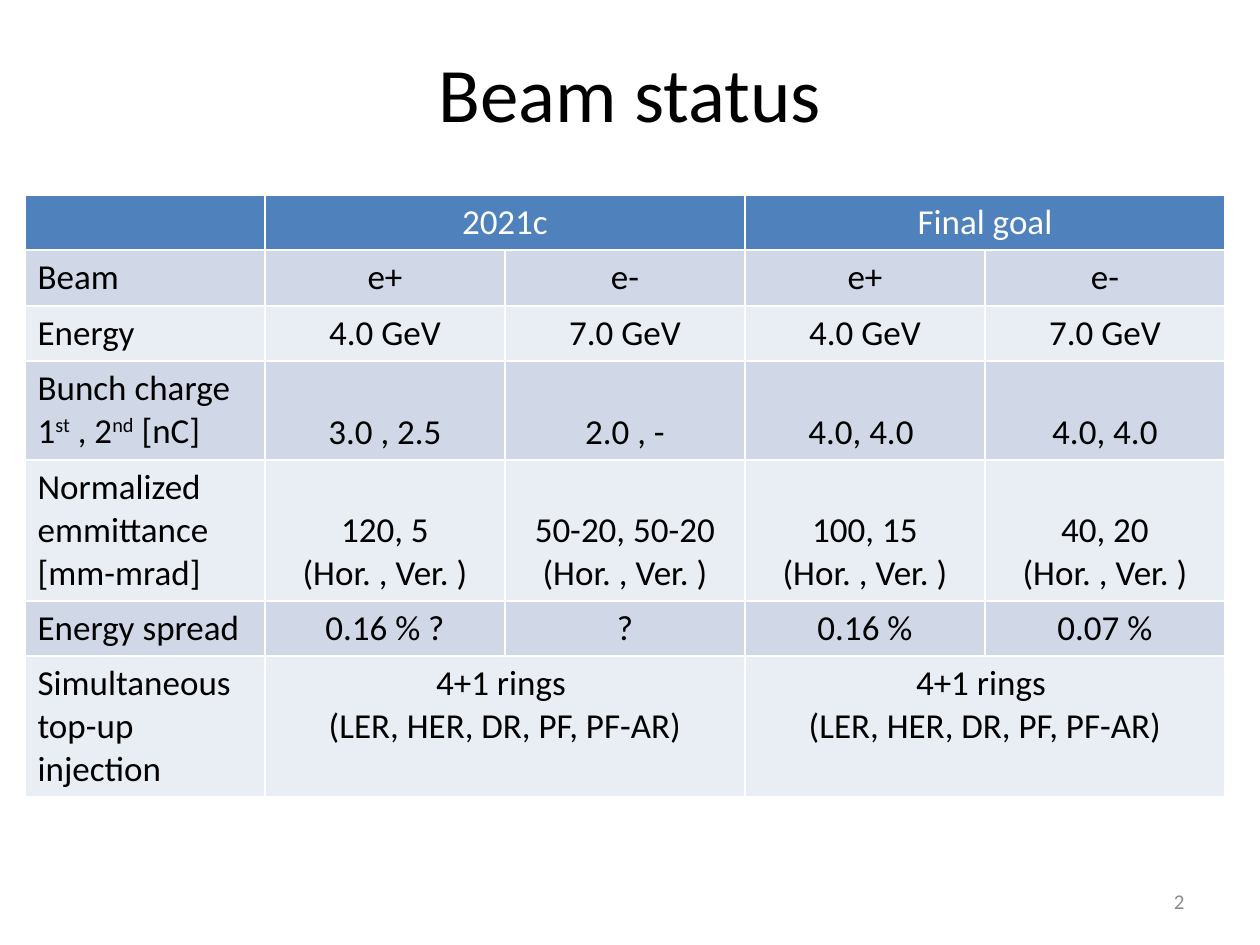
from pptx import Presentation
from pptx.dml.color import RGBColor
from pptx.enum.text import MSO_ANCHOR, PP_ALIGN
from pptx.util import Emu, Pt

FONT = "Calibri"
BLACK = RGBColor(0x00, 0x00, 0x00)
WHITE = RGBColor(0xFF, 0xFF, 0xFF)
GRAY = RGBColor(0x8C, 0x8C, 0x8C)
HEADER_BLUE = RGBColor(0x4F, 0x81, 0xBD)
BANDS = [RGBColor(0xE9, 0xED, 0xF4), RGBColor(0xD0, 0xD8, 0xE8)]

AXES = "\n(Hor. , Ver. )"
RINGS = "4+1 rings \n(LER, HER, DR, PF, PF-AR)"
ROWS = [
    ["", "2021c", None, "Final goal", None],
    ["Beam", "e+", "e-", "e+", "e-"],
    ["Energy", "4.0 GeV", "7.0 GeV", "4.0 GeV", "7.0 GeV"],
    ["Bunch charge\n1^st^ , 2^nd^ [nC]", "3.0 , 2.5", "2.0 , -", "4.0, 4.0 ", "4.0, 4.0"],
    ["Normalized emmittance\n[mm-mrad]", "120, 5" + AXES, "50-20, 50-20" + AXES,
     "100, 15" + AXES, "40, 20" + AXES],
    ["Energy spread", "0.16 % ?", "?", "0.16 %", "0.07 %"],
    ["Simultaneous top-up injection", RINGS, None, RINGS, None],
]
ROW_HEIGHTS = [55, 56, 55, 99, 141, 55, 141]
BOTTOM_ROWS = {3, 4}
COLUMN_WIDTH = 240


def px(length):
    return Emu(round(length * 914400 / 126))


def write(frame, text, size, color, align):
    """Write lines as paragraphs, raising the parts between carets."""
    for index, line in enumerate(text.split("\n")):
        para = frame.add_paragraph() if index else frame.paragraphs[0]
        para.alignment = align
        para.font.name = FONT
        para.font.size = Pt(size)
        para.font.bold = False
        para.font.color.rgb = color
        for part, piece in enumerate(line.split("^")):
            span = para.add_run()
            span.text = piece
            if part % 2:
                span.font._element.set("baseline", "30000")


def add_text(page, bounds, text, size, color, align):
    box = page.shapes.add_textbox(*map(px, bounds))
    box.text_frame.word_wrap = True
    box.text_frame.vertical_anchor = MSO_ANCHOR.MIDDLE
    write(box.text_frame, text, size, color, align)


def add_beam_table(page):
    columns = len(ROWS[0])
    bounds = map(px, (25, 195, columns * COLUMN_WIDTH, sum(ROW_HEIGHTS)))
    table = page.shapes.add_table(len(ROWS), columns, *bounds).table
    for column in table.columns:
        column.width = px(COLUMN_WIDTH)
    for r, (row, height) in enumerate(zip(ROWS, ROW_HEIGHTS)):
        table.rows[r].height = px(height)
        for c, text in enumerate(row):
            cell = table.cell(r, c)
            cell.fill.solid()
            cell.fill.fore_color.rgb = BANDS[r % 2] if r else HEADER_BLUE
            if text is None:
                table.cell(r, c - 1).merge(cell)
                continue
            cell.vertical_anchor = MSO_ANCHOR.BOTTOM if c and r in BOTTOM_ROWS else MSO_ANCHOR.TOP
            write(cell.text_frame, text, 20, BLACK if r else WHITE,
                  PP_ALIGN.CENTER if c else PP_ALIGN.LEFT)


def main():
    deck = Presentation()
    deck.slide_width, deck.slide_height = px(1260), px(945)
    page = deck.slides.add_slide(deck.slide_layouts[6])
    add_text(page, (63, 38, 1134, 107), "Beam status", 44, BLACK, PP_ALIGN.CENTER)
    add_beam_table(page)
    add_text(page, (903, 876, 294, 50), "2", 12, GRAY, PP_ALIGN.RIGHT)
    deck.save("out.pptx")


if __name__ == "__main__":
    main()
